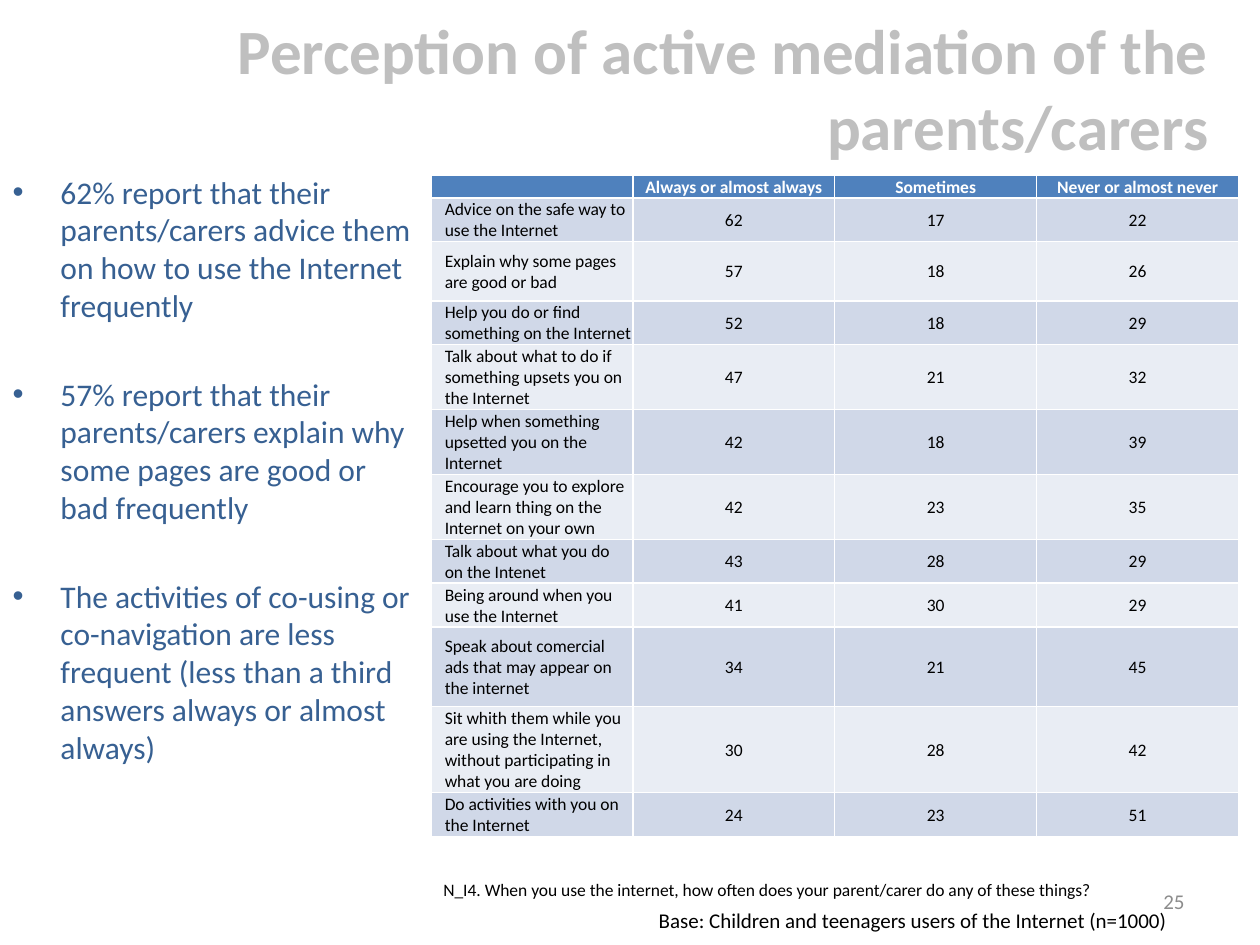
from lxml import etree
from pptx import Presentation
from pptx.dml.color import RGBColor
from pptx.enum.text import MSO_ANCHOR, PP_ALIGN
from pptx.oxml.ns import qn
from pptx.util import Inches, Pt

LEFT, CENTER, RIGHT = PP_ALIGN.LEFT, PP_ALIGN.CENTER, PP_ALIGN.RIGHT
MIDDLE, TOP = MSO_ANCHOR.MIDDLE, MSO_ANCHOR.TOP
COLORS = {"title": "BFBFBF", "findings": "376092", "number": "8C8C8C", "text": "000000",
          "header": "4F81BD", "header_text": "FFFFFF", "odd": "D0D8E8", "even": "E9EDF4"}


def style(paragraph, size, color, align=LEFT, bold=False):
    paragraph.alignment = align
    font = paragraph.font
    font.name, font.size, font.bold = "Calibri", Pt(size), bold
    font.color.rgb = RGBColor.from_string(COLORS[color])


def place(shape, left, top, width, height):
    shape.left, shape.top = Inches(left), Inches(top)
    shape.width, shape.height = Inches(width), Inches(height)


prs = Presentation()
prs.slide_width, prs.slide_height = Inches(10), Inches(7.5)
slide = prs.slides.add_slide(prs.slide_layouts[1])
table_left = 3.42

# Title
title = slide.shapes.title
place(title, 0.69, 0.07, 9, 1.25)
title.text_frame.text = "Perception of active mediation of the parents/carers"
title.text_frame.vertical_anchor = MIDDLE
style(title.text_frame.paragraphs[0], 36, "title", RIGHT, True)

# Findings
findings = slide.placeholders[1]
place(findings, 0, 1.32, table_left, 6.59)
findings.text_frame.text = "\n".join([
    "62% report that their parents/carers advice them on how to use the Internet frequently",
    "57% report that their parents/carers explain why some pages are good or bad frequently",
    "The activities of co-using or co-navigation are less frequent "
    "(less than a third answers always or almost always)",
])
for i, finding in enumerate(findings.text_frame.paragraphs):
    style(finding, 18, "findings")
    finding.space_before = Pt(29 if i else 4)
    properties = finding._p.get_or_add_pPr()
    properties.set("marL", str(Inches(0.38)))
    properties.set("indent", str(-Inches(0.38)))
    etree.SubElement(properties, qn("a:buChar"), char="•")
    # Bullets come before the default run properties in the schema
    properties.append(properties.find(qn("a:defRPr")))

# Mediation table: row height, activity, then one share per answer
header = (0.18, "", "Always or almost always", "Sometimes", "Never or almost never")
activities = [
    (0.34, "Advice on the safe way to use the Internet", 62, 17, 22),
    (0.47, "Explain why some pages are good or bad", 57, 18, 26),
    (0.34, "Help you do or find something on the Internet", 52, 18, 29),
    (0.51, "Talk about what to do if something upsets you on the Internet", 47, 21, 32),
    (0.51, "Help when something upsetted you on the Internet", 42, 18, 39),
    (0.51, "Encourage you to explore and learn thing on the Internet on your own", 42, 23, 35),
    (0.34, "Talk about what you do on the Intenet", 43, 28, 29),
    (0.34, "Being around when you use the Internet", 41, 30, 29),
    (0.63, "Speak about comercial ads that may appear on the internet", 34, 21, 45),
    (0.68, "Sit whith them while you are using the Internet, "
           "without participating in what you are doing", 30, 28, 42),
    (0.34, "Do activities with you on the Internet", 24, 23, 51),
]
rows = [header] + activities
mediation = slide.shapes.add_table(
    len(rows), 4, Inches(table_left), Inches(1.39), Inches(6.41),
    Inches(sum(row[0] for row in rows))).table
for r, (height, *values) in enumerate(rows):
    mediation.rows[r].height = Inches(height)
    band = "header" if r == 0 else "odd" if r % 2 else "even"
    for c, value in enumerate(values):
        cell = mediation.cell(r, c)
        cell.fill.solid()
        cell.fill.fore_color.rgb = RGBColor.from_string(COLORS[band])
        cell.vertical_anchor = MIDDLE
        cell.margin_left = Inches(0.01 if c else 0.11)
        cell.margin_right = cell.margin_top = Inches(0.01)
        cell.margin_bottom = 0
        cell.text = str(value)
        style(cell.text_frame.paragraphs[0], 10, "text" if r else "header_text",
              CENTER if c else LEFT, r == 0)

# Slide number, survey question and base
notes = [
    ("25", (7.17, 6.95, 2.33, 0.4), 12, "number", RIGHT, MIDDLE, True),
    ("N_I4. When you use the internet, how often does your parent/carer do any of these things?",
     (table_left, 6.93, 5.88, 0.27), 10, "text", LEFT, TOP, True),
    ("Base: Children and teenagers users of the Internet (n=1000)",
     (5.13, 7.15, 4.27, 0.3), 12, "text", LEFT, TOP, False),
]
for text, box, size, color, align, anchor, wrap in notes:
    note = slide.shapes.add_textbox(*map(Inches, box)).text_frame
    note.text = text
    note.word_wrap = wrap
    note.vertical_anchor = anchor
    style(note.paragraphs[0], size, color, align)

prs.save("out.pptx")
